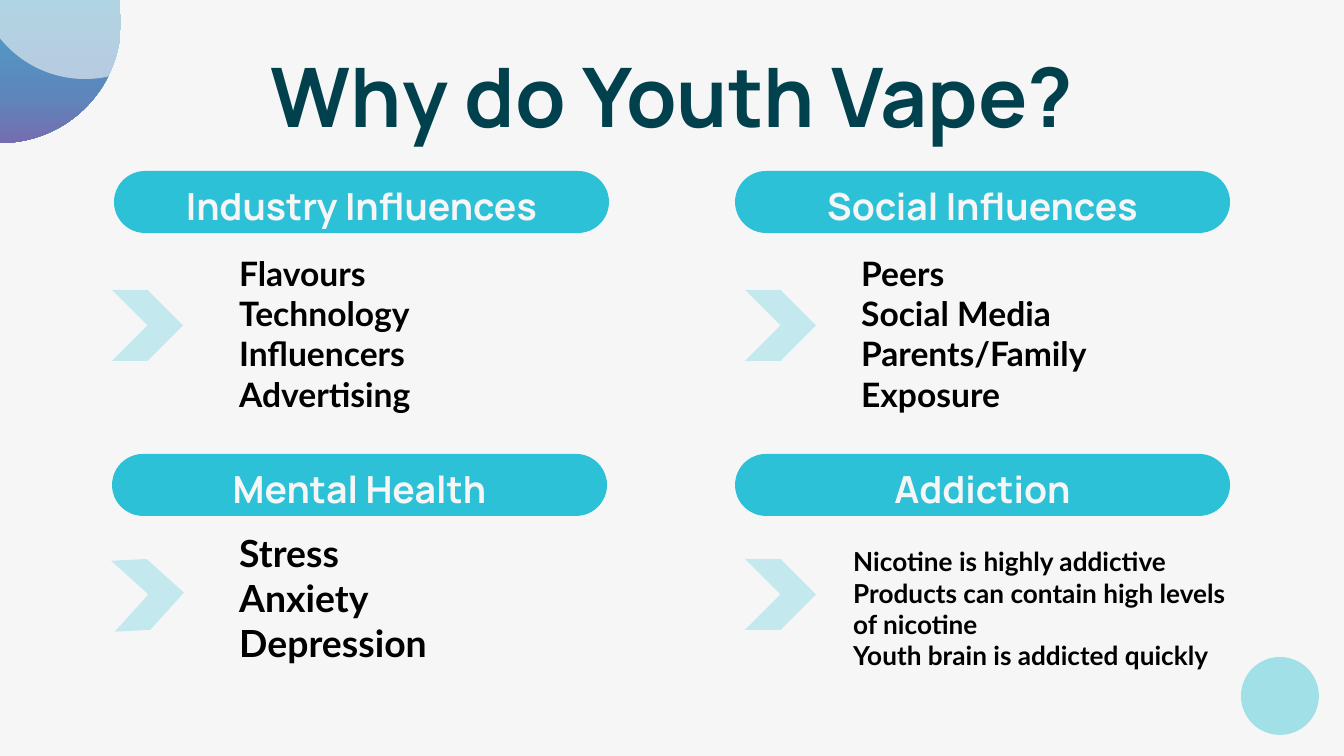
from lxml import etree
from pptx import Presentation
from pptx.dml.color import RGBColor
from pptx.enum.shapes import MSO_SHAPE
from pptx.enum.text import MSO_ANCHOR, MSO_AUTO_SIZE, PP_ALIGN
from pptx.oxml.ns import qn
from pptx.util import Pt

OVAL, PILL, CHEVRON = MSO_SHAPE.OVAL, MSO_SHAPE.ROUNDED_RECTANGLE, MSO_SHAPE.CHEVRON
TOP, MIDDLE = MSO_ANCHOR.TOP, MSO_ANCHOR.MIDDLE
LEFT, CENTER = PP_ALIGN.LEFT, PP_ALIGN.CENTER
NO_FIT = MSO_AUTO_SIZE.NONE
PX = 914400 / 134.4
TEAL, PALE = "2CC1D6", "F6F6F6"

TITLE = "Why do Youth Vape?"
STOPS = [(0, "34C1D6"), (80, "5D87BC"), (100, "756DAF")]
PILL_SIZE, ARROW_SIZE = (495, 62), (71, 71)
TOPICS = [
    {"head": "Industry Influences", "pill": (114, 171), "arrow": (112, 290), "turn": 0,
     "items": ["Flavours", "Technology", "Influencers", "Advertising"],
     "size": 18, "box": (226, 246, 203, 176)},
    {"head": "Social Influences", "pill": (735, 171), "arrow": (745, 290), "turn": 0,
     "items": ["Peers", "Social Media", "Parents/Family", "Exposure"],
     "size": 18, "box": (848, 246, 269, 176)},
    {"head": "Mental Health", "pill": (112, 454), "arrow": (113, 559), "turn": 357.1,
     "items": ["Stress", "Anxiety", "Depression"],
     "size": 20, "box": (226, 524, 672, 149)},
    {"head": "Addiction", "pill": (735, 454), "arrow": (745, 559), "turn": 0,
     "items": ["Nicotine is highly addictive",
               "Products can contain high levels of nicotine",
               "Youth brain is addicted quickly"],
     "size": 14, "box": (840, 539, 426, 140)},
]


def emu(*nums):
    """Turn px lengths into EMU."""
    return [round(n * PX) for n in nums]


def rgb(code):
    """Turn a hex string into a colour."""
    return RGBColor.from_string(code)


def add_shape(slide, kind, box, fill, alpha=100):
    """Add a flat shape with no outline."""
    shape = slide.shapes.add_shape(kind, *emu(*box))
    shape.shadow.inherit = False
    shape.line.fill.background()
    shape.fill.solid()
    shape.fill.fore_color.rgb = rgb(fill)
    if kind == PILL:
        shape.adjustments[0] = 0.5
    if alpha < 100:
        clr = shape._element.spPr.find(qn("a:solidFill"))[0]
        etree.SubElement(clr, qn("a:alpha"), val=str(alpha * 1000))
    return shape


def shade(shape, stops):
    """Fill a shape with a gradient running downward."""
    shape.fill.gradient()
    shape.fill.gradient_angle = 270
    holder = shape._element.spPr.find(".//" + qn("a:gsLst"))
    for old in list(holder):
        holder.remove(old)
    for pos, code in stops:
        stop = etree.SubElement(holder, qn("a:gs"), pos=str(pos * 1000))
        etree.SubElement(stop, qn("a:srgbClr"), val=code)


def write(shape, lines, font, size, color, align=LEFT, space=None, **form):
    """Write bold paragraphs into a shape."""
    frame = shape.text_frame
    for name, value in {"word_wrap": True, "auto_size": NO_FIT, **form}.items():
        setattr(frame, name, value)
    frame.text = "\n".join(lines)
    look = {"name": font, "size": Pt(size), "bold": True}
    for para in frame.paragraphs:
        para.alignment = align
        para.line_spacing = space
        for run in para.runs:
            for name, value in look.items():
                setattr(run.font, name, value)
            run.font.color.rgb = rgb(color)


def main():
    """Build the slide and save it."""
    deck = Presentation()
    deck.slide_width, deck.slide_height = emu(1344, 756)
    slide = deck.slides.add_slide(deck.slide_layouts[5])
    slide.background.fill.solid()
    slide.background.fill.fore_color.rgb = rgb(PALE)

    inset = emu(13)[0]
    pad = {f"margin_{side}": inset for side in ("left", "right", "top", "bottom")}

    shade(add_shape(slide, OVAL, (-121, -99, 242, 242), TEAL), STOPS)
    add_shape(slide, OVAL, (1241, 657, 78, 78), TEAL, 41)
    add_shape(slide, PILL, (-24, -562, 218, 641), PALE, 60)

    title = slide.shapes.title
    title.left, title.top, title.width, title.height = emu(106, 32, 1133, 85)
    write(title, [TITLE], "Manrope", 44, "00414D", CENTER, vertical_anchor=TOP, **pad)

    for topic in TOPICS:
        pill = add_shape(slide, PILL, topic["pill"] + PILL_SIZE, TEAL)
        write(pill, [topic["head"]], "Manrope", 20, PALE, CENTER, 1.15,
              vertical_anchor=MIDDLE, **pad)
        arrow = add_shape(slide, CHEVRON, topic["arrow"] + ARROW_SIZE, TEAL, 25)
        arrow.rotation = topic["turn"]
        box = slide.shapes.add_textbox(*emu(*topic["box"]))
        write(box, topic["items"], "Lato", topic["size"], "000000")

    deck.save("out.pptx")


if __name__ == "__main__":
    main()
